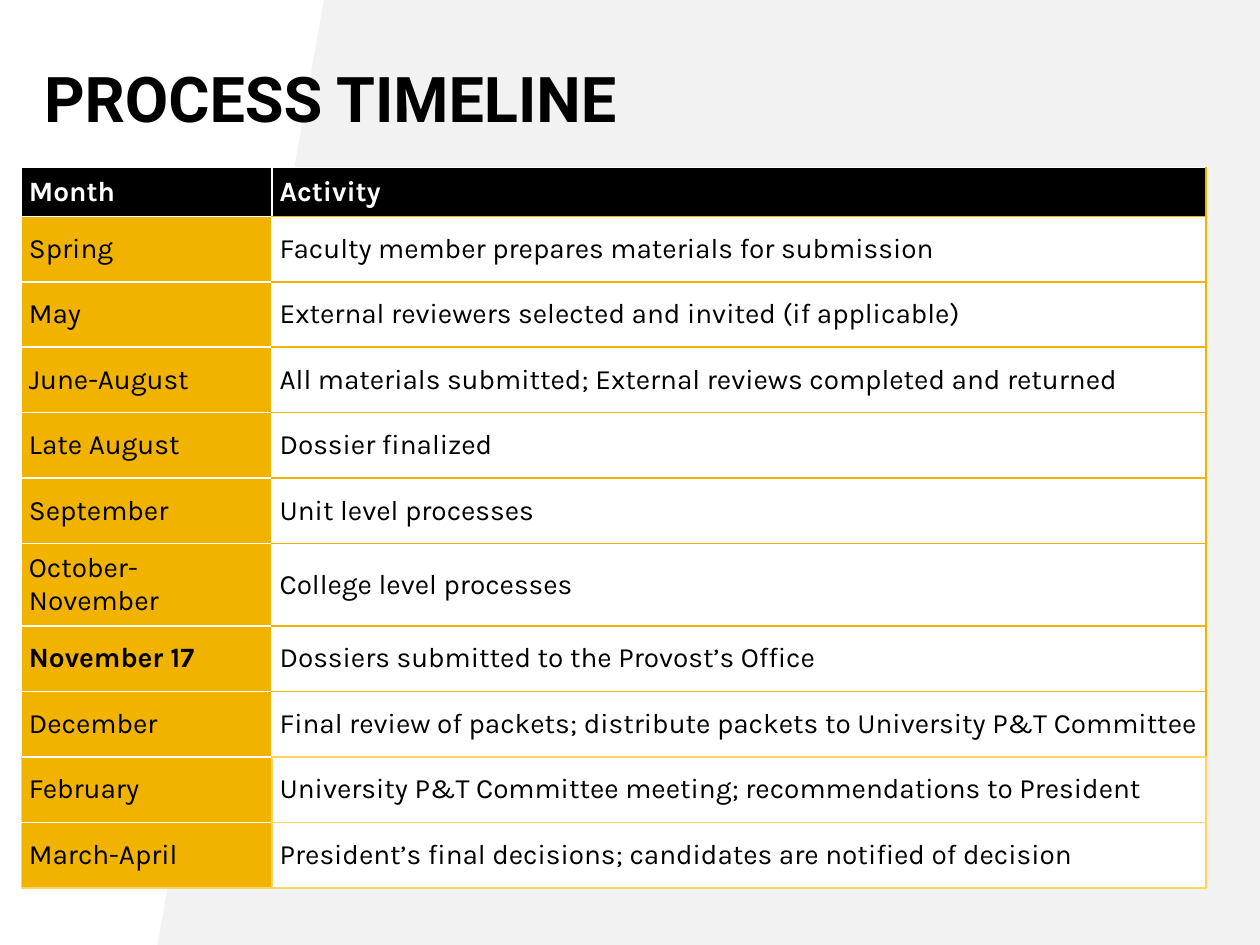
from dataclasses import dataclass

from lxml.etree import SubElement
from pptx import Presentation
from pptx.dml.color import RGBColor as Rgb
from pptx.enum.text import MSO_ANCHOR as Anchor
from pptx.oxml.ns import qn
from pptx.util import Inches, Pt

TITLE = "PROCESS TIMELINE"
HEADER = ("Month", "Activity")
TIMELINE = [
    ("Spring", "Faculty member prepares materials for submission"),
    ("May", "External reviewers selected and invited (if applicable)"),
    ("June-August", "All materials submitted; External reviews completed and returned"),
    ("Late August", "Dossier finalized"),
    ("September", "Unit level processes"),
    ("October-November", "College level processes"),
    ("November 17", "Dossiers submitted to the Provost’s Office"),
    ("December", "Final review of packets; distribute packets to University P&T Committee"),
    ("February", "University P&T Committee meeting; recommendations to President"),
    ("March-April", "President’s final decisions; candidates are notified of decision"),
]
DEADLINE = "November 17"
PALE_ROWS = 2
COLUMN_WIDTHS = (1.99, 7.41)
HEADER_HEIGHT, ROW_HEIGHT = 0.32, 0.52
BAND_OUTLINE = [(0, 0), (2.57, 0), (1.25, 7.5), (0, 7.5)]


@dataclass(frozen=True)
class Theme:
    black: str = "000000"
    white: str = "FFFFFF"
    gray: str = "F2F2F2"
    gold: str = "F1B300"
    pale: str = "FFD55E"
    title_font: str = "Roboto"
    body_font: str = "Karla"
    title_size: int = 36
    body_size: int = 16
    title_leading: float = 35.6
    border: int = 1
    inset: float = 0.06


THEME = Theme()


def paint(fill, color):
    fill.solid()
    fill.fore_color.rgb = Rgb.from_string(color)


def write(frame, text, font=THEME.body_font, size=THEME.body_size,
          color=THEME.black, bold=False, leading=None):
    frame.word_wrap = True
    paragraph = frame.paragraphs[0]
    if leading:
        paragraph.line_spacing = Pt(leading)
    run = paragraph.add_run()
    run.text = text
    run.font.name, run.font.size, run.font.bold = font, Pt(size), bold
    run.font.color.rgb = Rgb.from_string(color)


def set_borders(cell, **colors):
    properties = cell._tc.get_or_add_tcPr()
    for side in "LRTB":
        if side in colors:
            line = SubElement(properties, qn(f"a:ln{side}"), w=str(Pt(THEME.border)))
            solid = SubElement(line, qn("a:solidFill"))
            SubElement(solid, qn("a:srgbClr"), val=colors[side])


def month_borders(row, last):
    white, pale = THEME.white, THEME.pale
    if row <= last - PALE_ROWS:
        return dict(R=white, T=white, B=white)
    return dict(L=pale, R=pale, T=white, B=pale if row == last else white)


def activity_borders(row, last):
    first_pale = last - PALE_ROWS + 1
    edge = THEME.pale if row >= first_pale else THEME.gold
    return dict(
        L=THEME.pale if row >= first_pale else THEME.white,
        R=edge,
        T=edge if row else THEME.white,
        B=THEME.pale if row + 1 >= first_pale else THEME.gold,
    )


def add_band(slide):
    start, *corners = [(Inches(x), Inches(y)) for x, y in BAND_OUTLINE]
    builder = slide.shapes.build_freeform(*start)
    builder.add_line_segments(corners, close=True)
    band = builder.convert_to_shape()
    band.shadow.inherit = False
    paint(band.fill, THEME.white)
    band.line.fill.background()


def add_title(slide):
    title = slide.shapes.add_textbox(Inches(0.35), Inches(0.58), Inches(8.63), Inches(0.5))
    frame = title.text_frame
    frame.margin_left = frame.margin_right = frame.margin_top = frame.margin_bottom = 0
    write(frame, TITLE, font=THEME.title_font, size=THEME.title_size, bold=True,
          leading=THEME.title_leading)


def add_timeline(slide):
    entries = [HEADER, *TIMELINE]
    last = len(TIMELINE)
    heights = [HEADER_HEIGHT] + [ROW_HEIGHT] * last
    timeline = slide.shapes.add_table(
        len(entries), len(HEADER), Inches(0.17), Inches(1.33),
        Inches(sum(COLUMN_WIDTHS)), Inches(sum(heights))).table
    timeline.horz_banding = False
    for column, width in zip(timeline.columns, COLUMN_WIDTHS):
        column.width = Inches(width)
    for row, (entry, height) in enumerate(zip(entries, heights)):
        timeline.rows[row].height = Inches(height)
        for column, (text, body_fill, borders) in enumerate(zip(
                entry, (THEME.gold, THEME.white), (month_borders, activity_borders))):
            cell = timeline.cell(row, column)
            cell.vertical_anchor = Anchor.MIDDLE
            cell.margin_left = cell.margin_right = Inches(THEME.inset)
            cell.margin_top = cell.margin_bottom = Inches(THEME.inset)
            set_borders(cell, **borders(row, last))
            paint(cell.fill, body_fill if row else THEME.black)
            write(cell.text_frame, text, bold=row == 0 or text == DEADLINE,
                  color=THEME.black if row else THEME.white)


def main():
    deck = Presentation()
    deck.slide_width, deck.slide_height = Inches(10), Inches(7.5)
    slide = deck.slides.add_slide(deck.slide_layouts[6])
    paint(slide.background.fill, THEME.gray)
    add_band(slide)
    add_title(slide)
    add_timeline(slide)
    deck.save("out.pptx")


if __name__ == "__main__":
    main()
